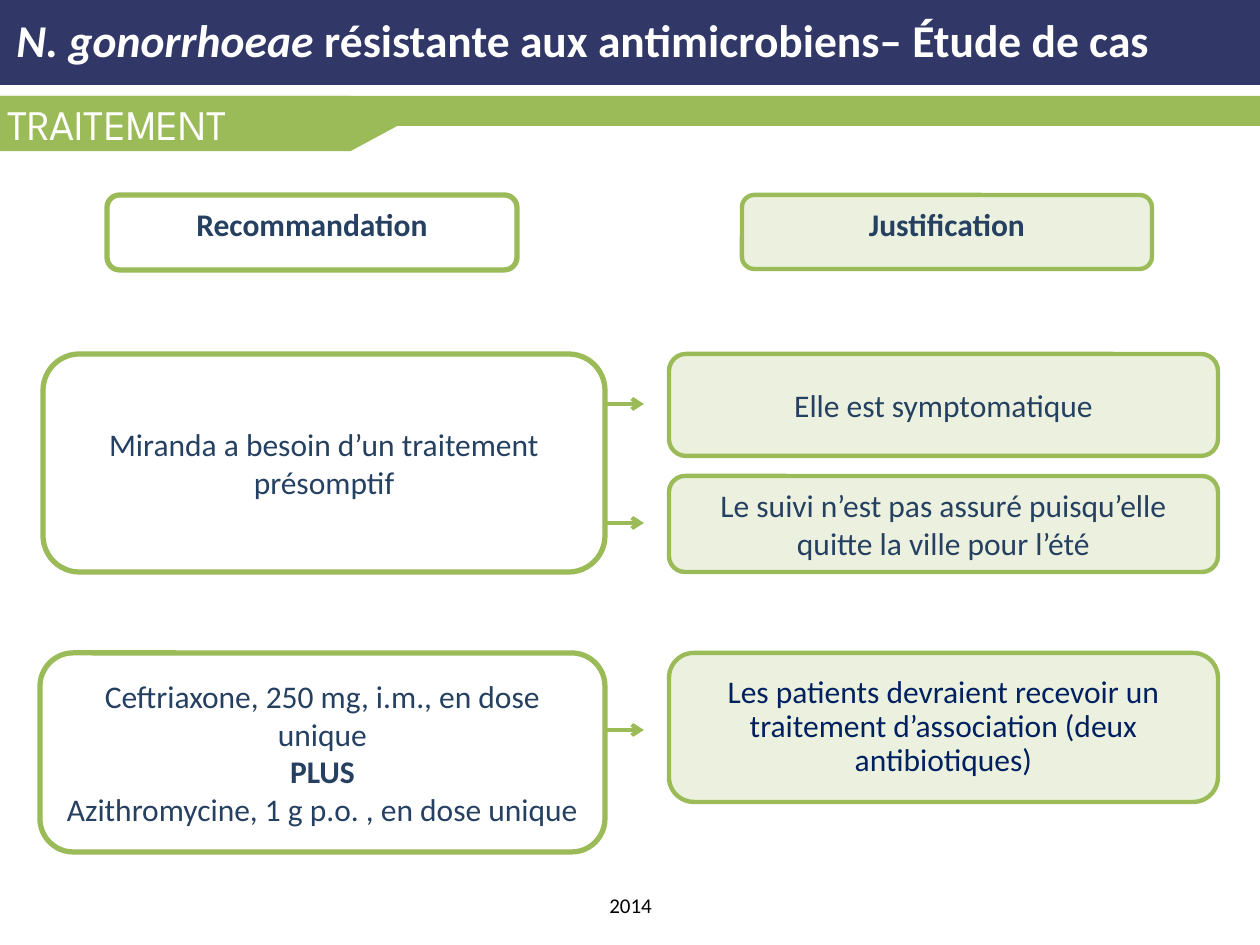
from dataclasses import dataclass

from lxml.etree import SubElement
from pptx import Presentation
from pptx.dml.color import RGBColor
from pptx.enum.shapes import MSO_CONNECTOR, MSO_SHAPE
from pptx.enum.text import MSO_ANCHOR, PP_ALIGN
from pptx.oxml.ns import qn
from pptx.util import Emu, Pt

PX = 914400 // 126


@dataclass(frozen=True)
class Theme:
    navy: str = "313867"
    green: str = "9BBB59"
    pale: str = "EBF1DE"
    white: str = "FFFFFF"
    black: str = "000000"
    ink: str = "254061"
    deep_ink: str = "002060"
    font: str = "Calibri"
    section_font: str = "League Spartan"
    title_size: int = 26
    section_size: int = 24
    body_size: int = 18
    footer_size: int = 12
    thick: float = 3
    medium: float = 2.5
    thin: float = 2.25


THEME = Theme()


def px(*lengths):
    return [Emu(length * PX) for length in lengths]


def add_span(para, text, size, color, font=THEME.font, bold=False, italic=False):
    span = para.add_run()
    span.text = text
    span.font.name = font
    span.font.size = Pt(size)
    span.font.bold = bold
    span.font.italic = italic
    span.font.color.rgb = RGBColor.from_string(color)


def add_band(page, kind, bounds, color):
    band = page.shapes.add_shape(kind, *px(*bounds))
    band.shadow.inherit = False
    band.fill.solid()
    band.fill.fore_color.rgb = RGBColor.from_string(color)
    band.line.fill.background()
    return band


def add_label(page, bounds, align=PP_ALIGN.LEFT):
    """Add a text box and return its first paragraph."""
    frame = page.shapes.add_textbox(*px(*bounds)).text_frame
    frame.word_wrap = True
    para = frame.paragraphs[0]
    para.alignment = align
    return para


def add_card(page, bounds, lines, fill, weight, color=THEME.ink,
             anchor=MSO_ANCHOR.MIDDLE, spacing=None):
    """Add a rounded box; lines holds (text, bold) pairs."""
    box = page.shapes.add_shape(MSO_SHAPE.ROUNDED_RECTANGLE, *px(*bounds))
    box.shadow.inherit = False
    box.fill.solid()
    box.fill.fore_color.rgb = RGBColor.from_string(fill)
    box.line.color.rgb = RGBColor.from_string(THEME.green)
    box.line.width = Pt(weight)
    frame = box.text_frame
    frame.word_wrap = True
    frame.vertical_anchor = anchor
    for index, (text, bold) in enumerate(lines):
        para = frame.add_paragraph() if index else frame.paragraphs[0]
        para.alignment = PP_ALIGN.CENTER
        if spacing:
            para.line_spacing = spacing
        add_span(para, text, THEME.body_size, color, bold=bold)


def add_recommendation(page, bounds, lines, **options):
    add_card(page, bounds, lines, THEME.white, THEME.thick, **options)


def add_reason(page, bounds, text, bold=False, **options):
    add_card(page, bounds, [(text, bold)], THEME.pale, THEME.medium, **options)


def add_arrow(page, left, right, y):
    arrow = page.shapes.add_connector(MSO_CONNECTOR.STRAIGHT, *px(left, y, right, y))
    arrow.line.color.rgb = RGBColor.from_string(THEME.green)
    arrow.line.width = Pt(THEME.thin)
    SubElement(arrow.line._get_or_add_ln(), qn("a:tailEnd"), type="arrow")
    SubElement(arrow._element.spPr, qn("a:effectLst"))


def add_header(page):
    add_band(page, MSO_SHAPE.RECTANGLE, (0, -4, 1262, 89), THEME.navy)
    add_band(page, MSO_SHAPE.RECTANGLE, (0, 96, 1262, 30), THEME.green)
    tab = add_band(page, MSO_SHAPE.PENTAGON, (-5, 96, 407, 55), THEME.green)
    tab.adjustments[0] = 0.93

    title = add_label(page, (4, 6, 1251, 68))
    add_span(title, "N. gonorrhoeae ", THEME.title_size, THEME.white,
             bold=True, italic=True)
    add_span(title, "résistante aux antimicrobiens– Étude de cas",
             THEME.title_size, THEME.white, bold=True)
    section = add_label(page, (-5, 92, 318, 63))
    add_span(section, "TRAITEMENT", THEME.section_size, THEME.white,
             font=THEME.section_font)


def main():
    deck = Presentation()
    deck.slide_width, deck.slide_height = px(1260, 945)
    page = deck.slides.add_slide(deck.slide_layouts[6])
    add_header(page)

    # Arrows from recommendations to reasons
    for y in (404, 523, 730):
        add_arrow(page, 595, 644, y)

    # Column headings
    add_recommendation(page, (107, 195, 410, 75), [("Recommandation", True)],
                       anchor=MSO_ANCHOR.TOP)
    add_reason(page, (742, 195, 410, 74), "Justification", bold=True,
               anchor=MSO_ANCHOR.TOP)

    # Recommendations
    add_recommendation(page, (43, 354, 562, 218),
                       [("Miranda a besoin d’un traitement présomptif", False)])
    add_recommendation(page, (40, 653, 565, 199), [
        ("Ceftriaxone, 250 mg, i.m., en dose unique", False),
        ("PLUS", True),
        ("Azithromycine, 1 g p.o. , en dose unique", False),
    ])

    # Reasons
    left, width = 669, 549
    add_reason(page, (left, 354, width, 102), "Elle est symptomatique")
    add_reason(page, (left, 476, width, 96),
               "Le suivi n’est pas assuré puisqu’elle quitte la ville pour l’été")
    add_reason(page, (left, 653, width, 149),
               "Les patients devraient recevoir un traitement d’association "
               "(deux antibiotiques)", color=THEME.deep_ink, spacing=0.9)

    # Footer year
    year = add_label(page, (591, 886, 79, 38), PP_ALIGN.CENTER)
    add_span(year, "2014", THEME.footer_size, THEME.black)

    deck.save("out.pptx")


if __name__ == "__main__":
    main()
